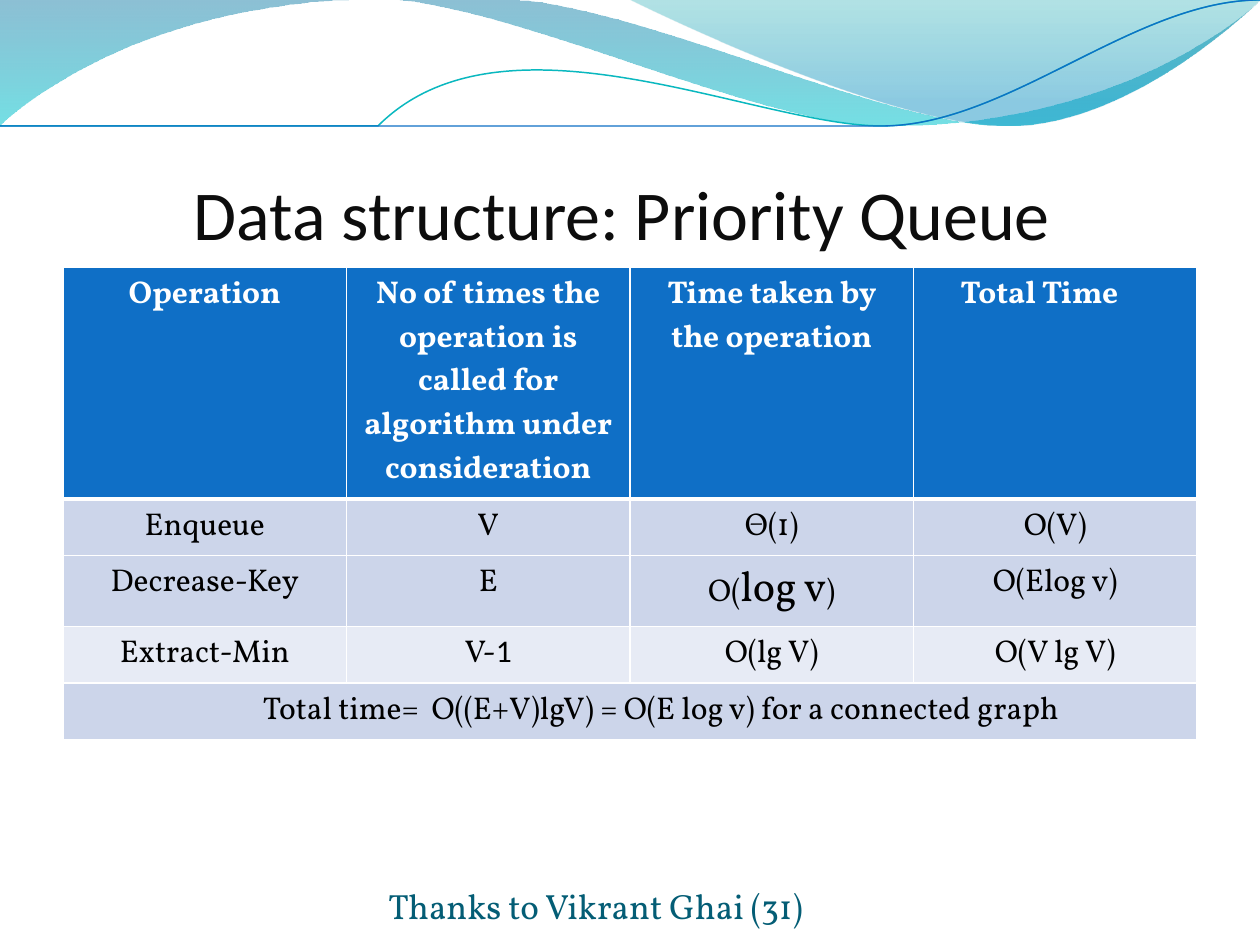
"""Build the slide on priority queue operation costs."""
from dataclasses import dataclass
from typing import Optional

from lxml import etree
from pptx import Presentation
from pptx import util as u
from pptx.dml.color import RGBColor
from pptx.enum import text
from pptx.oxml.ns import qn

WHITE = RGBColor(0xFF, 0xFF, 0xFF)
BLACK = RGBColor(0, 0, 0)
INK = RGBColor(0x0D, 0x0D, 0x0D)
BLUE = RGBColor(0x0F, 0x6F, 0xC6)
TEAL = RGBColor(0x0A, 0xB8, 0xBF)
DARK_TEAL = RGBColor(0x04, 0x5D, 0x75)
BAND = RGBColor(0xCC, 0xD5, 0xEA)
PALE_BAND = RGBColor(0xE7, 0xEB, 0xF5)
DEEP_BLUE = RGBColor(0x00, 0x74, 0xA1)
AQUA = RGBColor(0x00, 0xC6, 0xCF)
SEA = RGBColor(0x00, 0xA1, 0xA9)
SKY = RGBColor(0x00, 0x8B, 0xBF)
WAVE_UNIT = u.Cm(2.54)


@dataclass(frozen=True)
class Span:
    words: str
    size: float = 18
    font: str = "Vollkorn"
    color: RGBColor = BLACK
    bold: bool = False


@dataclass(frozen=True)
class Stop:
    position: float
    color: RGBColor
    opacity: int


@dataclass(frozen=True)
class Wave:
    """A start point, then lines (one point) and curves (three points)."""
    start: tuple
    pieces: tuple
    stops: tuple = ()
    color: Optional[RGBColor] = None
    width: float = 0


WAVES = (
    Wave((0, 0), (
        ((4.4, -0.01),),
        ((4.76, 0.17), (6.64, 0.63), (7.58, 0.63)),
        ((8.53, 0.63), (9.58, 0.26), (10, 0.09)),
        ((10.01, 0.36),),
        ((9.83, 0.44), (8.7, 0.76), (7.46, 0.75)),
        ((6.22, 0.75), (3.82, 0.28), (2.57, 0.34)),
        ((1.29, 0.36), (0.46, 0.83), (-0.01, 1.13)),
    ), stops=(Stop(0, DEEP_BLUE, 45), Stop(1, AQUA, 55))),
    Wave((4.79, -0.01), (
        ((5.09, 0.11), (6.82, 0.62), (7.69, 0.65)),
        ((8.56, 0.69), (9.61, 0.32), (10, 0.21)),
        ((10, 0),),
    ), stops=(Stop(0, SEA, 30), Stop(0.8, SKY, 45))),
    Wave((0, 1.11), (
        ((0.48, 0.93), (1.58, 0.57), (2.77, 0.52)),
        ((3.95, 0.47), (5.93, 0.89), (7.13, 0.8)),
        ((8.33, 0.71), (9.38, 0.15), (9.98, -0.02)),
    ), color=TEAL, width=0.85),
    Wave((0, 1.04), (
        ((0.47, 0.96), (1.64, 0.61), (2.83, 0.56)),
        ((4.03, 0.51), (5.97, 0.84), (7.17, 0.75)),
        ((8.36, 0.67), (9.41, 0.21), (10, 0.06)),
    ), color=BLUE, width=0.75),
)

HEADINGS = (
    "Operation",
    "No of times the operation is called for algorithm under consideration",
    "Time taken by the operation",
    "Total Time",
)
ROWS = (
    tuple((Span(words, color=WHITE, bold=True),) for words in HEADINGS),
    tuple((Span(words),) for words in ("Enqueue", "V", "Θ(1)", "O(V)")),
    ((Span("Decrease-Key"),), (Span("E"),),
     (Span("O("), Span("log v", size=24), Span(")")), (Span("O(Elog v)"),)),
    ((Span("Extract-Min"),), (Span("V-"), Span("1", font="Calibri")),
     (Span("O(lg V)"),), (Span("O(V lg V)"),)),
    ((Span("Total time=  O((E+V)lgV) = O(E log v) for a connected graph"),),),
)
ROW_FILLS = (BLUE, BAND, BAND, PALE_BAND, BAND)


def write(frame, spans: tuple) -> None:
    """Fill a text frame with one centred paragraph."""
    para = frame.paragraphs[0]
    para.alignment = text.PP_ALIGN.CENTER
    for span in spans:
        run = para.add_run()
        run.text = span.words
        run.font.size = u.Pt(span.size)
        run.font.name = span.font
        run.font.bold = span.bold
        run.font.color.rgb = span.color


def set_frame(frame, top: float = 0) -> None:
    """Anchor a text frame at the bottom with narrow insets."""
    frame.word_wrap = True
    frame.auto_size = text.MSO_AUTO_SIZE.NONE
    frame.vertical_anchor = text.MSO_ANCHOR.BOTTOM
    frame.margin_left = frame.margin_right = frame.margin_bottom = 0
    frame.margin_top = u.Cm(top)


def place(box, left: float, top: float, width: float, height: float) -> None:
    """Position a shape in centimetres."""
    box.left, box.top = u.Cm(left), u.Cm(top)
    box.width, box.height = u.Cm(width), u.Cm(height)


def draw_wave(page, wave: Wave) -> None:
    """Draw a curved band or line."""
    builder = page.shapes.build_freeform(*wave.start, scale=WAVE_UNIT)
    points = [point for piece in wave.pieces for point in piece]
    builder.add_line_segments(points, close=bool(wave.stops))
    shape = builder.convert_to_shape()
    shape.shadow.inherit = False
    segments = iter(list(shape._element.iter(qn("a:lnTo"))))
    for piece in wave.pieces:
        group = [next(segments) for _ in piece]
        if len(group) == 3:
            curve = etree.Element(qn("a:cubicBezTo"))
            group[0].addprevious(curve)
            for segment in group:
                curve.append(segment[0])
                segment.getparent().remove(segment)
    if not wave.stops:
        shape.fill.background()
        shape.line.color.rgb = wave.color
        shape.line.width = u.Pt(wave.width)
        return
    shape.line.fill.background()
    shape.fill.gradient()
    shape.fill.gradient_angle = 270
    for mark, stop in zip(shape.fill.gradient_stops, wave.stops):
        mark.position = stop.position
        mark.color.rgb = stop.color
    for color, stop in zip(shape._element.spPr.iter(qn("a:srgbClr")), wave.stops):
        etree.SubElement(color, qn("a:alpha"), val=str(stop.opacity * 1000))


def set_borders(cell, top: float, bottom: float) -> None:
    """Give a cell white borders."""
    props = cell._tc.get_or_add_tcPr()
    widths = {"lnL": 1, "lnR": 1, "lnT": top, "lnB": bottom}
    for place_in, (tag, width) in enumerate(widths.items()):
        line = etree.Element(qn(f"a:{tag}"), w=str(u.Pt(width)))
        fill = etree.SubElement(line, qn("a:solidFill"))
        etree.SubElement(fill, qn("a:srgbClr"), val=str(WHITE))
        props.insert(place_in, line)


def draw_table(page) -> None:
    """Draw the table of operation costs."""
    height = u.Cm(1.04)
    table = page.shapes.add_table(
        len(ROWS), len(HEADINGS), u.Cm(1.27), u.Cm(5.38),
        u.Cm(22.86), height * len(ROWS)).table
    table.horz_banding = False
    last = len(ROWS) - 1
    table.cell(last, 0).merge(table.cell(last, len(HEADINGS) - 1))
    for row, (entries, color) in enumerate(zip(ROWS, ROW_FILLS)):
        table.rows[row].height = height
        for column, spans in enumerate(entries):
            cell = table.cell(row, column)
            cell.fill.solid()
            cell.fill.fore_color.rgb = color
            set_borders(cell, 3 if row == 1 else 1, 3 if row == 0 else 1)
            write(cell.text_frame, spans)
    table.cell(0, len(HEADINGS) - 1).margin_right = u.Cm(0.9)
    table.cell(last, 0).margin_left = u.Cm(1.5)


def main() -> None:
    """Assemble and save the deck."""
    deck = Presentation()
    deck.slide_width, deck.slide_height = u.Cm(25.4), u.Cm(19.05)
    page = deck.slides.add_slide(deck.slide_layouts[5])
    for wave in WAVES:
        draw_wave(page, wave)
    title = page.shapes.title
    page.shapes._spTree.append(title._element)
    place(title, 1.27, 1.96, 22.86, 3.18)
    set_frame(title.text_frame, top=0.13)
    write(title.text_frame,
          (Span("Data structure: Priority Queue ", 40, "Calibri", INK),))
    draw_table(page)
    box = page.shapes.add_textbox(u.Cm(7.42), u.Cm(17.65), u.Cm(9.32), u.Cm(1.02))
    set_frame(box.text_frame)
    write(box.text_frame,
          (Span("Thanks to Vikrant Ghai (31) ", 20, color=DARK_TEAL),))
    deck.save("out.pptx")


if __name__ == "__main__":
    main()
